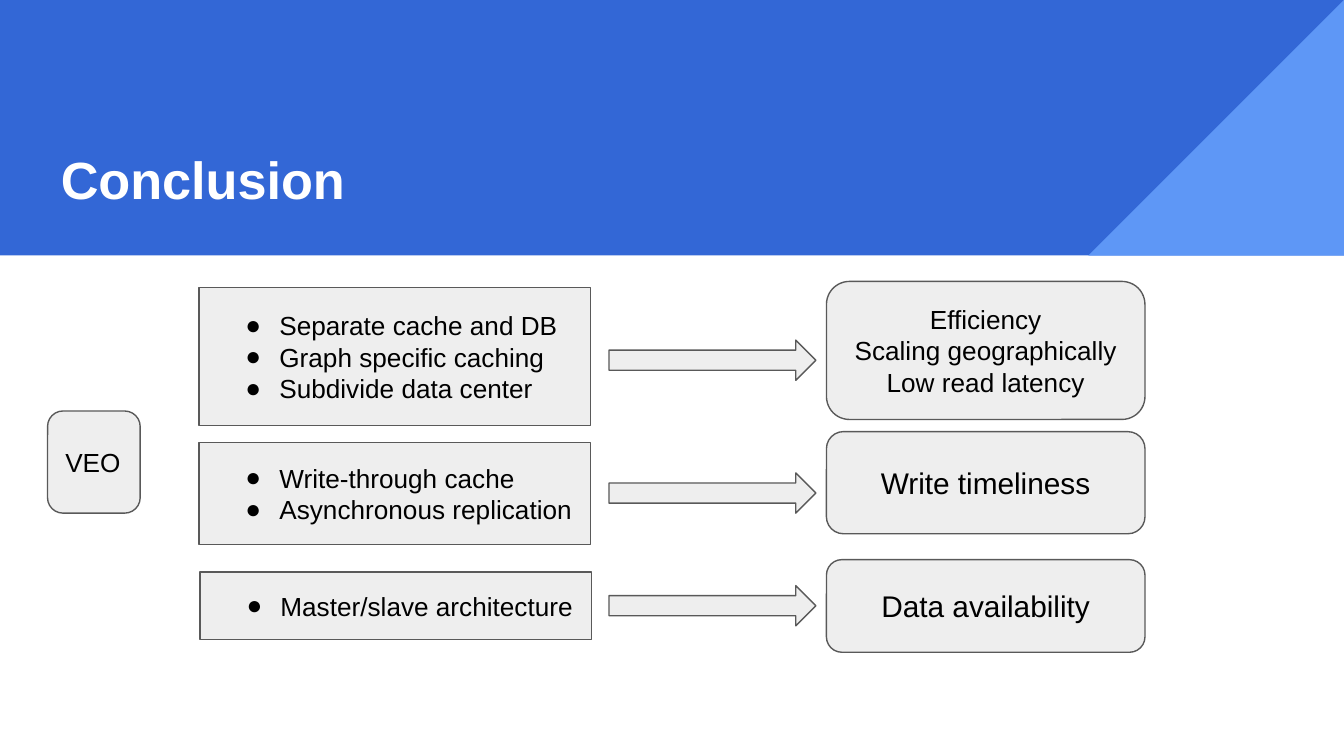
from lxml.etree import SubElement
from pptx import Presentation
from pptx.dml.color import RGBColor
from pptx.enum.shapes import MSO_SHAPE
from pptx.enum.text import MSO_ANCHOR, PP_ALIGN
from pptx.oxml.ns import qn
from pptx.util import Cm, Pt

FONT = "Arial"
BLACK, WHITE = "000000", "FFFFFF"
BLUE, LIGHT_BLUE = "3367D6", "5E97F6"
PANEL, OUTLINE = "EEEEEE", "595959"

CAUSE_WIDTH = 7.4
ARROW_LEFT, ARROW_WIDTH, ARROW_HEIGHT = 11.51, 3.91, 0.76
RESULT_LEFT, RESULT_WIDTH = 15.62, 6.02

ROWS = [
    {"causes": ["Separate cache and DB", "Graph specific caching", "Subdivide data center"],
     "cause_box": (3.76, 5.44, 2.61), "arrow_top": 6.43,
     "results": ["Efficiency", "Scaling geographically", "Low read latency"],
     "result_box": (5.32, 2.61), "result_size": 14},
    {"causes": ["Write-through cache", "Asynchronous replication"],
     "cause_box": (3.76, 8.36, 1.93), "arrow_top": 8.94,
     "results": ["Write timeliness"],
     "result_box": (8.16, 1.93), "result_size": 16},
    {"causes": ["Master/slave architecture"],
     "cause_box": (3.78, 10.81, 1.28), "arrow_top": 11.07,
     "results": ["Data availability"],
     "result_box": (10.58, 1.75), "result_size": 16},
]


def color(hex_value):
    return RGBColor.from_string(hex_value)


def add_block(slide, kind, left, top, width, height, fill=PANEL, outline=OUTLINE):
    shape = slide.shapes.add_shape(kind, Cm(left), Cm(top), Cm(width), Cm(height))
    shape.shadow.inherit = False
    shape.fill.solid()
    shape.fill.fore_color.rgb = color(fill)
    if outline:
        shape.line.color.rgb = color(outline)
        shape.line.width = Pt(0.75)
    else:
        shape.line.fill.background()
    return shape


def add_bullet(paragraph):
    properties = paragraph._p.get_or_add_pPr()
    properties.set("marL", str(Cm(1.27)))
    properties.set("indent", str(-Cm(0.64)))
    SubElement(properties, qn("a:buFont"), typeface=FONT)
    SubElement(properties, qn("a:buChar"), char="●")


def write_lines(shape, lines, size=14, font_color=BLACK, bold=False,
                align=PP_ALIGN.LEFT, anchor=MSO_ANCHOR.MIDDLE, bulleted=False):
    frame = shape.text_frame
    frame.word_wrap = True
    frame.vertical_anchor = anchor
    frame.margin_left = frame.margin_right = Cm(0.25)
    frame.margin_top = frame.margin_bottom = Cm(0.25)
    for index, line in enumerate(lines):
        paragraph = frame.add_paragraph() if index else frame.paragraphs[0]
        paragraph.alignment = align
        if bulleted:
            add_bullet(paragraph)
        run = paragraph.add_run()
        run.text = line
        run.font.name = FONT
        run.font.size = Pt(size)
        run.font.bold = bold
        run.font.color.rgb = color(font_color)


def add_header(slide, title):
    add_block(slide, MSO_SHAPE.RECTANGLE, 0, 0, 25.4, 4.83, BLUE, None)
    corner = add_block(slide, MSO_SHAPE.RIGHT_TRIANGLE, 20.57, 0, 4.83, 4.83,
                       LIGHT_BLUE, None)
    corner.rotation = 270
    title_box = slide.shapes.add_textbox(Cm(0.9), Cm(0.41), Cm(13.06), Cm(3.81))
    write_lines(title_box, [title], 28, WHITE, bold=True, anchor=MSO_ANCHOR.BOTTOM)


def add_row(slide, row):
    left, top, height = row["cause_box"]
    cause = add_block(slide, MSO_SHAPE.RECTANGLE, left, top, CAUSE_WIDTH, height)
    write_lines(cause, row["causes"], bulleted=True)

    add_block(slide, MSO_SHAPE.RIGHT_ARROW, ARROW_LEFT, row["arrow_top"],
              ARROW_WIDTH, ARROW_HEIGHT)

    top, height = row["result_box"]
    result = add_block(slide, MSO_SHAPE.ROUNDED_RECTANGLE, RESULT_LEFT, top,
                       RESULT_WIDTH, height)
    write_lines(result, row["results"], row["result_size"], align=PP_ALIGN.CENTER)


def main():
    presentation = Presentation()
    presentation.slide_width = Cm(25.4)
    presentation.slide_height = Cm(14.29)
    slide = presentation.slides.add_slide(presentation.slide_layouts[6])

    add_header(slide, "Conclusion")
    for row in ROWS:
        add_row(slide, row)
    system = add_block(slide, MSO_SHAPE.ROUNDED_RECTANGLE, 0.9, 7.77, 1.75, 1.93)
    write_lines(system, ["VEO"])

    presentation.save("out.pptx")


if __name__ == "__main__":
    main()
